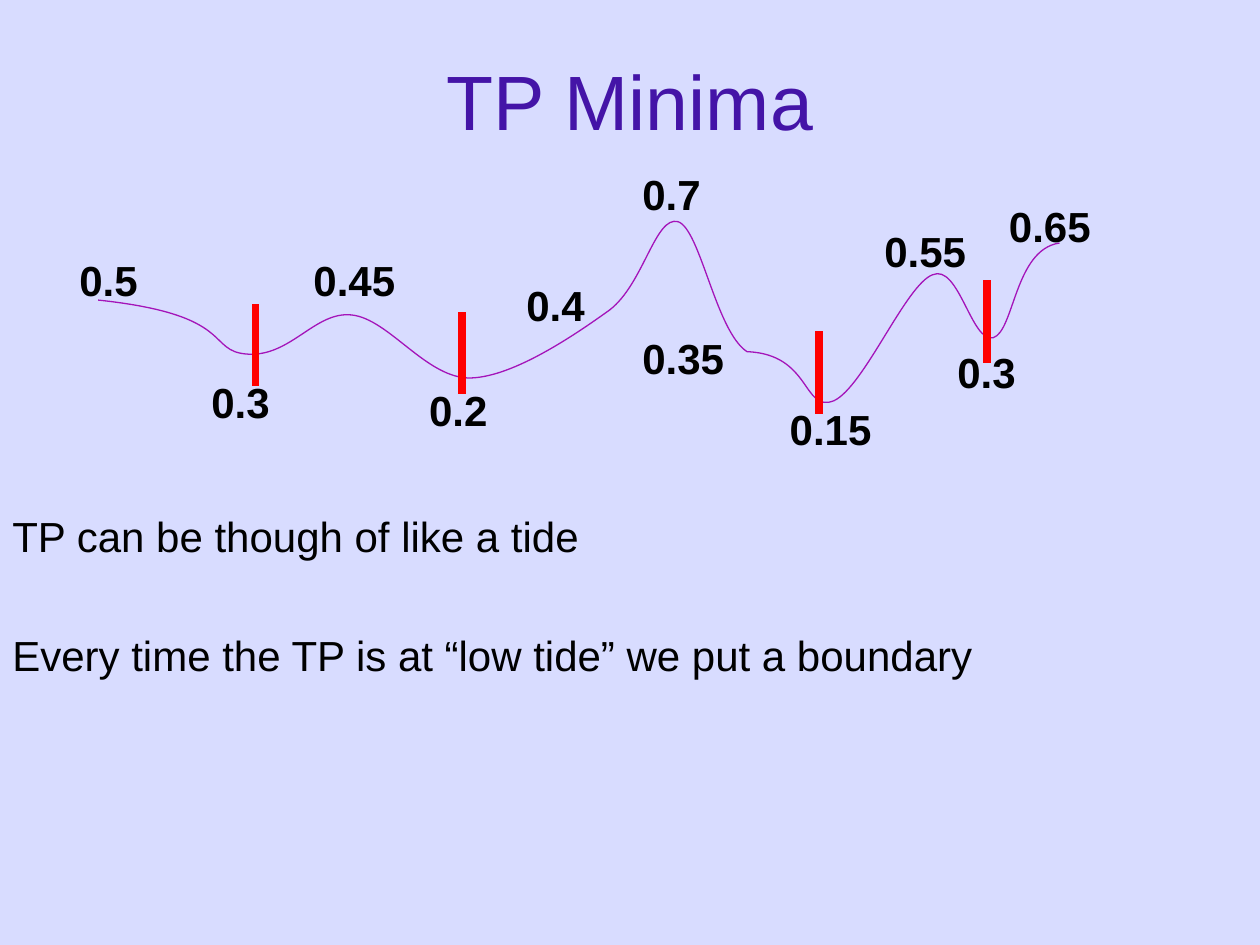
from typing import NamedTuple

from lxml.etree import SubElement
from pptx import Presentation
from pptx.dml.color import RGBColor
from pptx.enum.shapes import MSO_CONNECTOR
from pptx.enum.text import MSO_ANCHOR, PP_ALIGN
from pptx.oxml.ns import qn
from pptx.util import Cm, Pt

BACKGROUND = RGBColor(0xD8, 0xDC, 0xFF)
TITLE = RGBColor(0x44, 0x14, 0xA7)
CURVE = RGBColor(0xA4, 0x15, 0xB9)
BOUNDARY = RGBColor(0xFF, 0x00, 0x00)
BLACK = RGBColor(0x00, 0x00, 0x00)
FONT = "Arial"
UNITS_PER_CM = 100


class Label(NamedTuple):
    text: str
    left: float
    top: float


class Boundary(NamedTuple):
    x: float
    top: float


class Bezier(NamedTuple):
    control1: tuple[float, float]
    control2: tuple[float, float]
    end: tuple[float, float]


LABELS = [
    Label("0.45", 6.07, 5),
    Label("0.5", 1.35, 5),
    Label("0.3", 4.01, 7.47),
    Label("0.2", 8.4, 7.62),
    Label("0.4", 10.36, 5.51),
    Label("0.7", 12.7, 3.28),
    Label("0.35", 12.7, 6.58),
    Label("0.15", 15.67, 8),
    Label("0.55", 17.58, 4.42),
    Label("0.3", 19.05, 6.86),
    Label("0.65", 20.09, 3.91),
]
BOUNDARIES = [
    Boundary(5.15, 6.13),
    Boundary(9.31, 6.29),
    Boundary(16.51, 6.68),
    Boundary(19.9, 5.65),
]
BOUNDARY_HEIGHT = 1.66
CURVE_START = (1.98, 6.05)
CURVE_PARTS = [
    Bezier((4.8, 6.35), (4.14, 7.09), (5, 7.14)),
    Bezier((5.87, 7.19), (6.35, 6.27), (7.09, 6.35)),
    Bezier((7.85, 6.43), (8.61, 7.65), (9.5, 7.62)),
    Bezier((10.36, 7.59), (11.58, 6.76), (12.29, 6.25)),
    Bezier((12.98, 5.72), (13.21, 4.34), (13.67, 4.47)),
    Bezier((14.12, 4.62), (14.43, 6.68), (15.06, 7.09)),
    Bezier((16.36, 7.14), (16.18, 8.33), (16.81, 8.08)),
    Bezier((17.42, 7.8), (18.26, 5.74), (18.8, 5.54)),
    Bezier((19.33, 5.31), (19.58, 6.91), (20.02, 6.81)),
    Bezier((20.45, 6.68), (20.45, 5.03), (21.36, 4.9)),
]
STATEMENTS = [
    "TP can be though of like a tide",
    "Every time the TP is at “low tide” we put a boundary",
]


def add_text(s, lines: list[str], left: float, top: float, width: float,
             height: float, size: int = 24, color: RGBColor = BLACK,
             bold: bool = False, gap: int = 0):
    sp = s.shapes.add_textbox(Cm(left), Cm(top), Cm(width), Cm(height))
    tf = sp.text_frame
    tf.word_wrap = True
    for i, line in enumerate(lines):
        p = tf.add_paragraph() if i else tf.paragraphs[0]
        p.space_before = Pt(gap if i else 0)
        r = p.add_run()
        r.text = line
        r.font.name = FONT
        r.font.size = Pt(size)
        r.font.bold = bold
        r.font.color.rgb = color
    return tf


def add_curve(s, start: tuple[float, float], parts: list[Bezier]) -> None:
    ends = [start] + [part.end for part in parts]
    left = min(x for x, _ in ends)
    top = min(y for _, y in ends)
    builder = s.shapes.build_freeform(
        *(round(v * UNITS_PER_CM) for v in start), scale=Cm(1) / UNITS_PER_CM)
    builder.add_line_segments(
        [(round(x * UNITS_PER_CM), round(y * UNITS_PER_CM))
         for x, y in ends[1:]], close=False)
    sp = builder.convert_to_shape()
    sp.shadow.inherit = False
    sp.fill.background()
    sp.line.color.rgb = CURVE
    sp.line.width = Pt(0.75)
    segments = list(sp.element.iter(qn("a:lnTo")))
    for segment, part in zip(segments, parts):
        segment.tag = qn("a:cubicBezTo")
        segment.remove(segment[0])
        for x, y in part:
            SubElement(segment, qn("a:pt"),
                       x=str(round((x - left) * UNITS_PER_CM)),
                       y=str(round((y - top) * UNITS_PER_CM)))


def add_boundary(s, boundary: Boundary) -> None:
    x = Cm(boundary.x)
    line = s.shapes.add_connector(
        MSO_CONNECTOR.STRAIGHT, x, Cm(boundary.top),
        x, Cm(boundary.top + BOUNDARY_HEIGHT))
    line.line.color.rgb = BOUNDARY
    line.line.width = Pt(4.5)
    SubElement(line.element.spPr, qn("a:effectLst"))


def main() -> None:
    prs = Presentation()
    prs.slide_width, prs.slide_height = Cm(25.4), Cm(19.05)
    s = prs.slides.add_slide(prs.slide_layouts[6])
    s.background.fill.solid()
    s.background.fill.fore_color.rgb = BACKGROUND

    tf = add_text(s, ["TP Minima"], 1.9, 0.43, 21.6, 3.18, 44, TITLE)
    tf.vertical_anchor = MSO_ANCHOR.MIDDLE
    tf.paragraphs[0].alignment = PP_ALIGN.CENTER
    tf = add_text(s, STATEMENTS, 0, 2.97, 25.4, 14.17, gap=39)
    tf.margin_top = Cm(7.33)

    add_curve(s, CURVE_START, CURVE_PARTS)
    for label in LABELS:
        add_text(s, [label.text], label.left, label.top, 2.34, 1.27, bold=True)
    for boundary in BOUNDARIES:
        add_boundary(s, boundary)
    prs.save("out.pptx")


if __name__ == "__main__":
    main()
